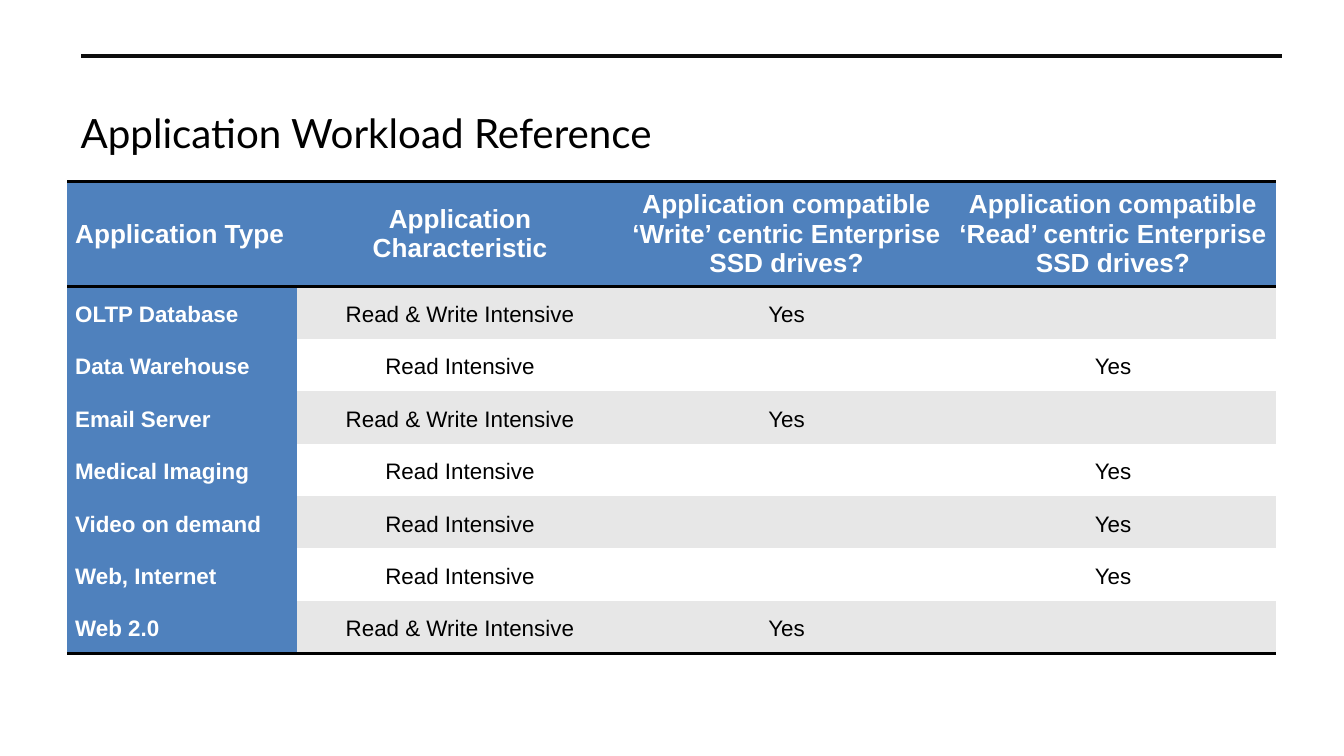
"""Build the application workload reference slide."""
import dataclasses

import pptx
import pptx.dml.color
import pptx.enum.shapes
import pptx.enum.text
import pptx.oxml
import pptx.oxml.ns
import pptx.util

Cm = pptx.util.Cm
Pt = pptx.util.Pt
Anchor = pptx.enum.text.MSO_ANCHOR
Align = pptx.enum.text.PP_ALIGN


@dataclasses.dataclass(frozen=True)
class Theme:
    black: str = "000000"
    white: str = "FFFFFF"
    rule: str = "0D0D0D"
    blue: str = "4F81BD"
    band: str = "E7E7E7"
    title_font: str = "Lato"
    table_font: str = "Arial"
    title_size: float = 21.6
    header_size: float = 14
    body_size: float = 12
    line_width: float = 2


THEME = Theme()
NO_GRID_STYLE = "{2D5ABB26-0587-4C30-8999-92F81FD0307C}"
COLUMN_WIDTHS = (4.34, 6.17, 6.17, 6.17)
HEADER_HEIGHT = 1.98
ROW_HEIGHT = 0.99
HEADER = (
    "Application Type",
    "Application Characteristic",
    "Application compatible ‘Write’ centric Enterprise SSD drives?",
    "Application compatible ‘Read’ centric Enterprise SSD drives?",
)
WORKLOADS = (
    ("OLTP Database", True),
    ("Data Warehouse", False),
    ("Email Server", True),
    ("Medical Imaging", False),
    ("Video on demand", False),
    ("Web, Internet", False),
    ("Web 2.0", True),
)


def rgb(color):
    return pptx.dml.color.RGBColor.from_string(color)


def format_font(font, name, size, color, bold=False):
    font.name = name
    font.size = Pt(size)
    font.bold = bold
    font.color.rgb = rgb(color)


def add_rule(slide):
    rule = slide.shapes.add_connector(
        pptx.enum.shapes.MSO_CONNECTOR.STRAIGHT, Cm(1.54), Cm(1.06), Cm(24.23), Cm(1.06)
    )
    rule.line.color.rgb = rgb(THEME.rule)
    rule.line.width = Pt(THEME.line_width)
    rule._element.spPr.append(pptx.oxml.parse_xml(f"<a:effectLst {pptx.oxml.ns.nsdecls('a')}/>"))


def set_title(slide, text):
    title = slide.shapes.title
    title.left, title.top, title.width, title.height = Cm(1.27), Cm(1.88), Cm(22.86), Cm(1.24)
    frame = title.text_frame
    frame.text = text
    frame.vertical_anchor = Anchor.MIDDLE
    paragraph = frame.paragraphs[0]
    paragraph.alignment = Align.LEFT
    format_font(paragraph.font, THEME.title_font, THEME.title_size, THEME.black)


def add_border(cell, side):
    border = pptx.oxml.parse_xml(
        f'<a:{side} {pptx.oxml.ns.nsdecls("a")} w="{Pt(THEME.line_width)}"><a:solidFill>'
        f'<a:srgbClr val="{THEME.black}"/></a:solidFill></a:{side}>'
    )
    cell._tc.get_or_add_tcPr().insert(0, border)


def fill_cell(cell, text, row, column):
    is_header = row == 0
    is_label = is_header or column == 0
    cell.margin_left = cell.margin_right = Cm(0.15)
    cell.margin_top = cell.margin_bottom = 0
    cell.vertical_anchor = Anchor.MIDDLE
    cell.text = text
    paragraph = cell.text_frame.paragraphs[0]
    paragraph.alignment = Align.LEFT if column == 0 else Align.CENTER
    paragraph.line_spacing = 1.0 if is_header else 1.15
    format_font(
        paragraph.font,
        THEME.table_font,
        THEME.header_size if is_header else THEME.body_size,
        THEME.white if is_label else THEME.black,
        is_label,
    )
    cell.fill.solid()
    band = THEME.band if row % 2 else THEME.white
    cell.fill.fore_color.rgb = rgb(THEME.blue if is_label else band)
    if row in (0, len(WORKLOADS)):
        add_border(cell, "lnB")
    if is_header:
        add_border(cell, "lnT")


def workload_row(name, writes):
    if writes:
        return name, "Read & Write Intensive", "Yes", ""
    return name, "Read Intensive", "", "Yes"


def add_workload_table(slide):
    rows = [HEADER] + [workload_row(*workload) for workload in WORKLOADS]
    height = HEADER_HEIGHT + ROW_HEIGHT * len(WORKLOADS)
    table = slide.shapes.add_table(
        len(rows), len(HEADER), Cm(1.27), Cm(3.43), Cm(sum(COLUMN_WIDTHS)), Cm(height)
    ).table
    table._tbl.tblPr.find(pptx.oxml.ns.qn("a:tableStyleId")).text = NO_GRID_STYLE
    for column, width in zip(table.columns, COLUMN_WIDTHS):
        column.width = Cm(width)
    for row_index, texts in enumerate(rows):
        table.rows[row_index].height = Cm(ROW_HEIGHT if row_index else HEADER_HEIGHT)
        for column_index, text in enumerate(texts):
            fill_cell(table.cell(row_index, column_index), text, row_index, column_index)


def main():
    presentation = pptx.Presentation()
    presentation.slide_width, presentation.slide_height = Cm(25.4), Cm(14.28)
    slide = presentation.slides.add_slide(presentation.slide_layouts[5])
    add_rule(slide)
    set_title(slide, "Application Workload Reference")
    add_workload_table(slide)
    presentation.save("out.pptx")


if __name__ == "__main__":
    main()
